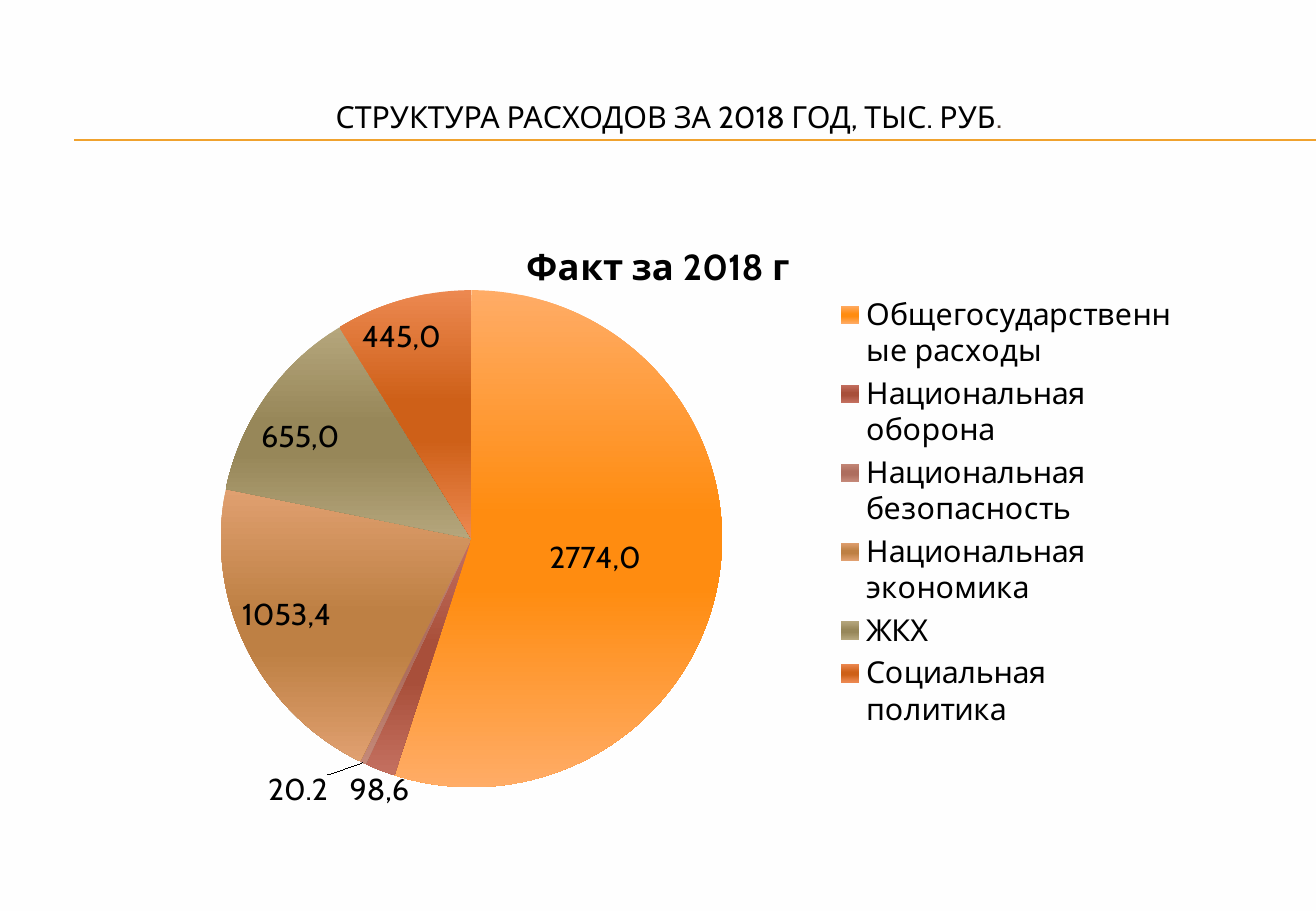
"""Build the slide with the pie of 2018 spending."""
from lxml.etree import SubElement
from pptx import Presentation
from pptx.chart.data import CategoryChartData
from pptx.dml.color import RGBColor
from pptx.enum.chart import XL_CHART_TYPE as ChartType
from pptx.enum.chart import XL_LABEL_POSITION as Label
from pptx.enum.chart import XL_LEGEND_POSITION as Legend
from pptx.enum.shapes import MSO_CONNECTOR as Connector
from pptx.enum.text import MSO_ANCHOR as Anchor
from pptx.enum.text import PP_ALIGN as Align
from pptx.oxml import parse_xml
from pptx.oxml.ns import nsdecls, qn
from pptx.util import Pt

FONT = "Cabin"
COLORS = {"back": "FEFEFE", "text": "000000", "stop": "4E3B30", "rule": "F0A22E"}
SLICES = [
    ("Общегосударственные расходы", 2774, "2774,0", Label.CENTER, None, "FFAC66", "FF8C10"),
    ("Национальная оборона", 98.6, "98,6", Label.OUTSIDE_END, (0.03, 0), "C47060", "A84F3A"),
    ("Национальная безопасность", 20.2, None, Label.OUTSIDE_END, (-0.03, 0.01), "C48878", "AE6E5E"),
    ("Национальная экономика", 1053.4, "1053,4", Label.INSIDE_END, (-0.01, -0.02), "E0A070", "BE8044"),
    ("ЖКХ", 655, "655,0", Label.INSIDE_END, (-0.01, 0.03), "B5A67C", "978759"),
    ("Социальная политика", 445, "445,0", Label.INSIDE_END, (-0.04, 0.02), "EC8850", "CE6018"),
]


def style(font, size, color="text", bold=False):
    font.name, font.size, font.bold = FONT, Pt(size), bold
    font.color.rgb = RGBColor.from_string(COLORS[color])


def make_layout(**parts):
    layout = parse_xml(f"<c:layout {nsdecls('c')}><c:manualLayout/></c:layout>")
    for name, value in parts.items():
        SubElement(layout[0], qn(f"c:{name}")).set("val", str(value))
    return layout


deck = Presentation()
deck.slide_width, deck.slide_height = Pt(780), Pt(540)
page = deck.slides.add_slide(deck.slide_layouts[5])
page.background.fill.solid()
page.background.fill.fore_color.rgb = RGBColor.from_string(COLORS["back"])

for top in (82.8, 83.5):
    rule = page.shapes.add_connector(Connector.STRAIGHT, Pt(44), Pt(top), Pt(780), Pt(top))
    rule.line.color.rgb = RGBColor.from_string(COLORS["rule"])
    rule.line.width = Pt(0.75)
    SubElement(rule._element.spPr, qn("a:effectLst"))

title = page.shapes.title
title.left, title.top, title.width, title.height = Pt(26), Pt(36), Pt(741), Pt(66)
title.text_frame.vertical_anchor = Anchor.MIDDLE
para = title.text_frame.paragraphs[0]
para.alignment = Align.CENTER
for text, color in (("СТРУКТУРА РАСХОДОВ ЗА 2018 ГОД, ТЫС. РУБ", "text"), (".", "stop")):
    span = para.add_run()
    span.text = text
    style(span.font, 18, color)

data = CategoryChartData()
data.categories = [row[0] for row in SLICES]
data.add_series("Факт за 2018 г", [row[1] for row in SLICES])
frame = page.shapes.add_chart(ChartType.PIE, Pt(74), Pt(128), Pt(632), Pt(354), data)
chart = frame.chart
style(chart.font, 18)
chart.has_title = True
span = chart.chart_title.text_frame.paragraphs[0].add_run()
span.text = "Факт за 2018 г"
style(span.font, 21.6, bold=True)
chart.has_legend = True
chart.legend.position = Legend.RIGHT
chart.legend.include_in_layout = False
style(chart.legend.font, 18)

pie = chart.plots[0]
pie.vary_by_categories = True
area = pie._element.getparent()
for old in area.findall(qn("c:layout")):
    area.remove(old)
area.insert(0, make_layout(layoutTarget="inner", xMode="edge", yMode="edge",
                           x=0.09, y=0.12, w=0.47, h=0.85))

series = pie.series[0]
labels = series.data_labels
labels.show_value = True
style(labels.font, 18)
for index, (name, value, text, position, shift, light, dark) in enumerate(SLICES):
    point = series.points[index]
    fill = point.format.fill
    fill.gradient()
    fill.gradient_angle = 270
    stops = point.format._element.find(".//" + qn("a:gsLst"))
    for old in list(stops):
        stops.remove(old)
    for place, color in ((0, light), (45, dark), (60, dark), (100, light)):
        stop = SubElement(stops, qn("a:gs"), pos=str(place * 1000))
        SubElement(stop, qn("a:srgbClr"), val=color)
    label = point.data_label
    if text:
        span = label.text_frame.paragraphs[0].add_run()
        span.text = text
        style(span.font, 18)
    else:
        style(label.font, 18)
    label.position = position
    if shift:
        entry = labels._element.xpath(f'c:dLbl[c:idx/@val="{index}"]')[0]
        entry.insert(1, make_layout(x=shift[0], y=shift[1]))

deck.save("out.pptx")
